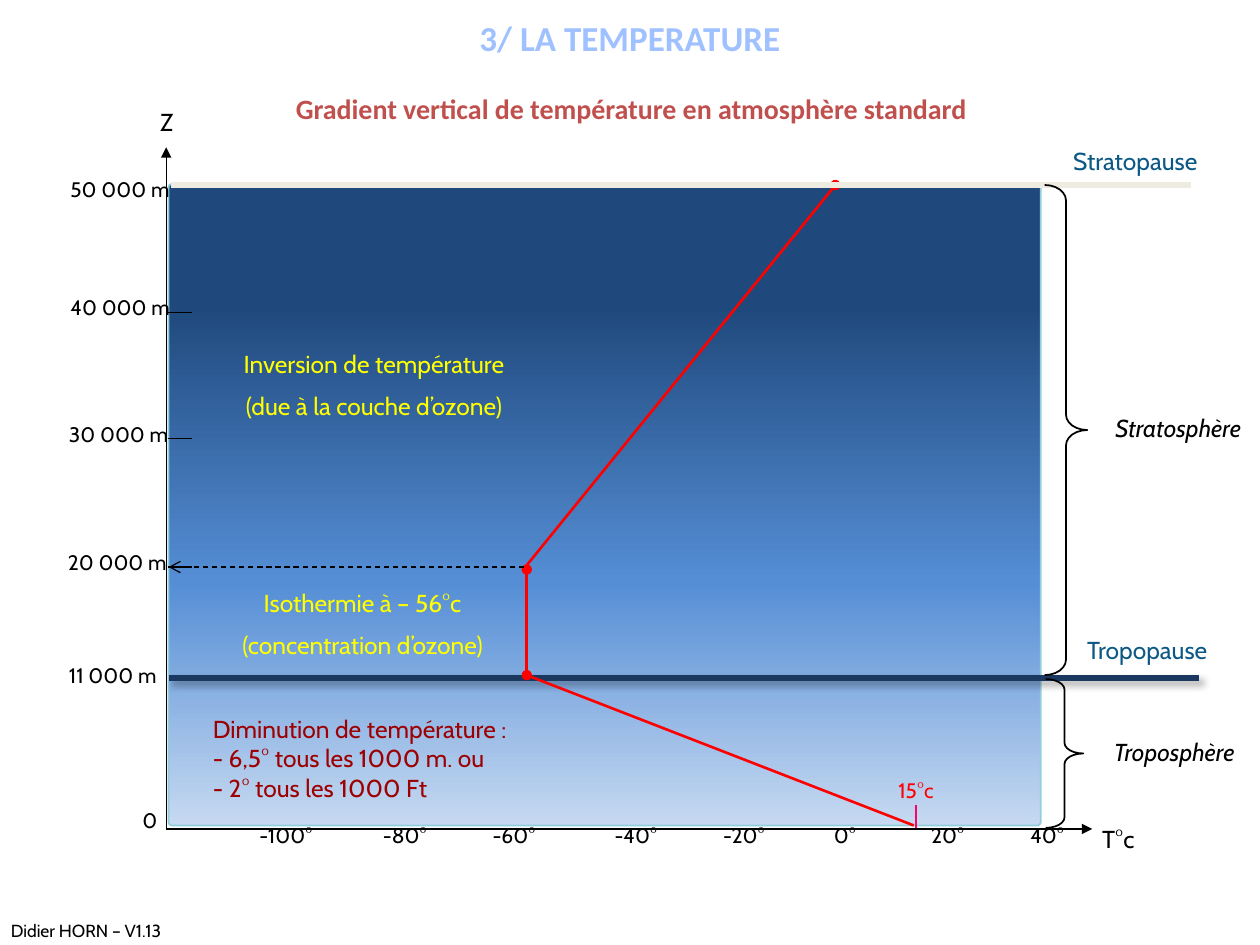
from dataclasses import dataclass

import lxml.etree
import pptx
import pptx.dml.color
import pptx.enum.dml
import pptx.enum.shapes
import pptx.enum.text
import pptx.oxml.ns
import pptx.util

Cm = pptx.util.Cm
Pt = pptx.util.Pt
Align = pptx.enum.text.PP_ALIGN
Shape = pptx.enum.shapes.MSO_SHAPE

BLACK, RED, YELLOW, BLUE = "000000", "FF0000", "FFFF00", "0C5986"
AXIS_X, AXIS_Y = 3.35, 16.71


@dataclass
class Line:
    start: tuple
    end: tuple
    color: str = BLACK
    width: float = 0.75
    tip: str = ""
    dash: bool = False
    shade: bool = False


@dataclass
class Layer:
    name: str
    box: tuple
    brace: tuple
    bend: float


@dataclass
class Mark:
    text: str
    left: float
    top: float


def paint(target, color: str) -> None:
    target.rgb = pptx.dml.color.RGBColor.from_string(color)


def add_node(parent, tag: str, **values):
    return lxml.etree.SubElement(parent, pptx.oxml.ns.qn(tag), values)


def add_text(slide, text: str, box: tuple, *, size=14, color=BLACK, font="Cabin",
             align=Align.LEFT, bold=False, slant=False, middle=False, gap=0, after=0) -> None:
    frame = slide.shapes.add_textbox(*map(Cm, box)).text_frame
    frame.word_wrap = True
    if middle:
        frame.vertical_anchor = pptx.enum.text.MSO_ANCHOR.MIDDLE
    for index, row in enumerate(text.split("\n")):
        para = frame.paragraphs[0] if index == 0 else frame.add_paragraph()
        para.alignment = align
        para.space_after = Pt(after)
        if index:
            para.space_before = Pt(gap)
        run = para.add_run()
        run.text = row
        run.font.name, run.font.size = font, Pt(size)
        run.font.bold, run.font.italic = bold, slant
        paint(run.font.color, color)


def add_line(slide, line: Line) -> None:
    kind = pptx.enum.shapes.MSO_CONNECTOR.STRAIGHT
    shape = slide.shapes.add_connector(kind, *map(Cm, line.start + line.end))
    paint(shape.line.color, line.color)
    shape.line.width = Pt(line.width)
    if line.dash:
        shape.line.dash_style = pptx.enum.dml.MSO_LINE.DASH
    if line.tip:
        add_node(shape.line._get_or_add_ln(), "a:tailEnd", type=line.tip)
    effects = add_node(shape._element.spPr, "a:effectLst")
    if line.shade:
        shadow = add_node(effects, "a:outerShdw", blurRad=str(Pt(4)), dist=str(Pt(3)),
                          dir="2700000", algn="tl", rotWithShape="0")
        color = add_node(shadow, "a:srgbClr", val=BLACK)
        add_node(color, "a:alpha", val="43000")


def add_sky(slide) -> None:
    sky = slide.shapes.add_shape(Shape.ROUNDED_RECTANGLE, *map(Cm, (3.4, 3.71, 17.58, 12.93)))
    sky.adjustments[0] = 0.005
    sky.shadow.inherit = False
    sky.fill.gradient()
    sky.fill.gradient_angle = 270
    stops = sky._element.spPr.find(".//" + pptx.oxml.ns.qn("a:gsLst"))
    for stop in list(stops):
        stops.remove(stop)
    for place, color in ((19, "1F497D"), (62, "558ED5"), (100, "C6D9F1")):
        stop = add_node(stops, "a:gs", pos=str(place * 1000))
        add_node(stop, "a:srgbClr", val=color)
    paint(sky.line.color, "92CDDC")
    sky.line.width = Pt(1)


def add_layer(slide, layer: Layer) -> None:
    brace = slide.shapes.add_shape(Shape.RIGHT_BRACE, *map(Cm, layer.brace))
    brace.adjustments[0] = layer.bend
    brace.adjustments[1] = 0.5
    brace.shadow.inherit = False
    brace.fill.background()
    paint(brace.line.color, BLACK)
    brace.line.width = Pt(1)
    add_text(slide, layer.name, layer.box, align=Align.RIGHT, slant=True, middle=True)


def main() -> None:
    deck = pptx.Presentation()
    deck.slide_width, deck.slide_height = Cm(25.4), Cm(19.05)
    slide = deck.slides.add_slide(deck.slide_layouts[6])

    add_text(slide, "Didier HORN – V1.13 ©", (-0.03, 18.42, 3.81, 0.69), size=10)
    add_sky(slide)

    lines = [
        Line((10.62, 13.61), (10.62, 11.48), RED, 1.5, "oval"),
        Line((10.59, 11.43), (16.84, 3.73), RED, 1.5, "oval"),
        Line((18.47, AXIS_Y), (18.47, 16.23), "FF0066", 1),
        Line((24.18, 13.67), (3.4, 13.67), "1B3861", 3, shade=True),
        Line((10.57, 11.43), (3.4, 11.43), tip="arrow", dash=True),
        Line((AXIS_X, AXIS_Y), (AXIS_X, 2.97), tip="triangle"),
        *(Line((3.38, top), (3.87, top)) for top in (11.43, 8.84, 6.3)),
        Line((3.45, 3.73), (24, 3.73), "EEECE1", 3),
        Line((18.42, 16.64), (10.62, 13.61), RED, 1.5, "oval"),
        Line((AXIS_X, AXIS_Y), (22.02, AXIS_Y), tip="triangle"),
    ]
    for line in lines:
        add_line(slide, line)

    heights = [
        Mark("50 000 m", 1.17, 3.43),
        Mark("40 000 m", 1.17, 5.82),
        Mark("30 000 m", 1.14, 8.38),
        Mark("20 000 m", 1.12, 10.95),
        Mark("11 000 m", 1.14, 13.23),
    ]
    lefts = (4.98, 7.47, 9.68, 12.14, 14.33, 16.56, 18.52, 20.52)
    degrees = [Mark(f"{-100 + 20 * step}°", left, 16.46) for step, left in enumerate(lefts)]
    for mark in heights + degrees:
        add_text(slide, mark.text, (mark.left, mark.top, 2.67, 0.76), size=12)
    add_text(slide, "0", (1.24, 16.15, 2.18, 0.76), size=12, align=Align.RIGHT)
    add_text(slide, "Z", (2.36, 2.03, 2.01, 0.86), align=Align.CENTER)
    add_text(slide, "T°c", (21.54, 16.48, 2.01, 0.86), align=Align.CENTER)
    add_text(slide, "15°c", (17.86, 15.54, 2.01, 0.76), size=12, color=RED)

    notes = (
        ("Isothermie à – 56°c\n(concentration d’ozone)", (3.45, 11.73, 7.72, 1.75)),
        ("Inversion de température\n(due à la couche d’ozone)", (3.91, 6.91, 7.26, 1.75)),
    )
    for text, box in notes:
        add_text(slide, text, box, color=YELLOW, align=Align.CENTER, gap=7)
    add_text(slide, "Diminution de température :\n- 6,5° tous les 1000 m. ou\n- 2° tous les 1000 Ft",
             (4.04, 14.27, 7.14, 2.06), color="9C0001")

    limits = (
        ("Tropopause", (21.36, 12.62, 3.23, 0.94)),
        ("Stratopause", (20.73, 2.77, 3.66, 0.94)),
    )
    for text, box in limits:
        add_text(slide, text, box, color=BLUE, align=Align.RIGHT, middle=True)

    layers = (
        Layer("Stratosphère", (21.51, 8.15, 3.76, 0.94), (21.06, 3.73, 0.86, 9.88), 0.36),
        Layer("Troposphère", (21.13, 14.68, 4.01, 0.94), (21.08, 13.69, 0.76, 3), 0.28),
    )
    for layer in layers:
        add_layer(slide, layer)

    add_text(slide, "Gradient vertical de température en atmosphère standard",
             (0.03, 1.73, 25.4, 0.94), size=16, color="C0504D", font="Calibri",
             align=Align.CENTER, bold=True, after=6)
    add_text(slide, "3/ LA TEMPERATURE", (0, 0.08, 25.4, 1.37), size=20, color="A0C1FF",
             font="Calibri", align=Align.CENTER, bold=True, middle=True, after=12)

    deck.save("out.pptx")


if __name__ == "__main__":
    main()
